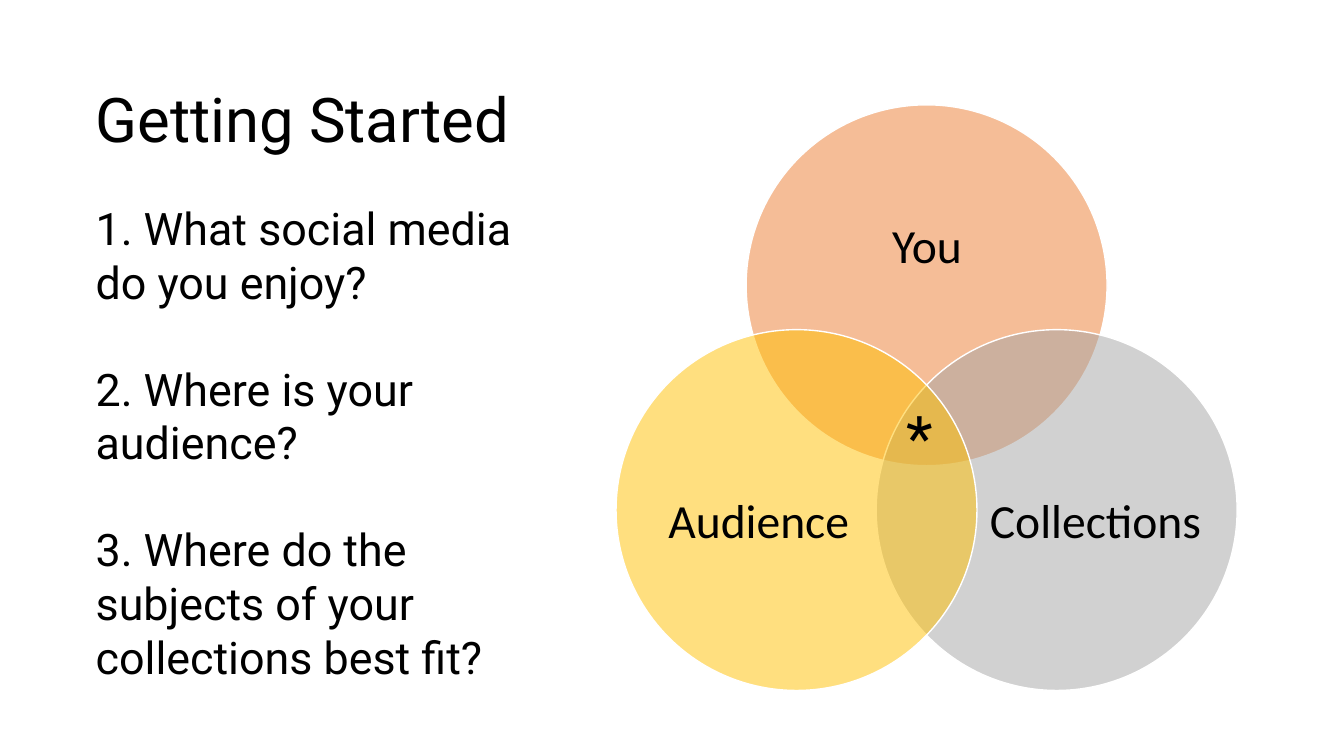
import math
from dataclasses import dataclass

import pptx
import pptx.dml.color
import pptx.enum.shapes
import pptx.enum.text
import pptx.oxml
import pptx.oxml.ns
import pptx.util

PX = 9144
CENTER_X, CENTER_Y = 919, 432
RADIUS, ORBIT = 179, 149


@dataclass(frozen=True)
class Circle:
    label: str
    color: str
    angle: int
    label_box: tuple[int, int, int, int]


CIRCLES = [
    Circle("You", "ED7D31", -90, (788, 166, 263, 161)),
    Circle("Collections", "A5A5A5", 30, (979, 420, 215, 197)),
    Circle("Audience", "FFC000", 150, (645, 420, 215, 197)),
]
QUESTIONS = [
    "1. What social media do you enjoy?",
    "2. Where is your audience?",
    "3. Where do the subjects of your collections best fit?",
]


def px(n: int) -> int:
    return pptx.util.Emu(n * PX)


def rgb(color: str) -> pptx.dml.color.RGBColor:
    return pptx.dml.color.RGBColor.from_string(color)


def add_text(shapes, box: tuple[int, int, int, int], *lines: str, size: int,
             font: str = "Roboto", color: str = "000000",
             align: str = "LEFT", anchor: str = "TOP", line_spacing: float = 1.0,
             gap: int = 0, inset: bool = True) -> None:
    tf = shapes.add_textbox(*map(px, box)).text_frame
    tf.word_wrap = True
    tf.vertical_anchor = pptx.enum.text.MSO_ANCHOR[anchor]
    if not inset:
        tf.margin_left = tf.margin_top = tf.margin_right = tf.margin_bottom = 0
    for i, line in enumerate(lines):
        p = tf.add_paragraph() if i else tf.paragraphs[0]
        p.alignment = pptx.enum.text.PP_ALIGN[align]
        p.line_spacing = line_spacing
        if i:
            p.space_before = pptx.util.Pt(gap)
        r = p.add_run()
        r.text = line
        r.font.name = font
        r.font.size = pptx.util.Pt(size)
        r.font.color.rgb = rgb(color)


def add_circle(shapes, circle: Circle) -> None:
    angle = math.radians(circle.angle)
    left = round(CENTER_X + ORBIT * math.cos(angle)) - RADIUS
    top = round(CENTER_Y + ORBIT * math.sin(angle)) - RADIUS
    s = shapes.add_shape(pptx.enum.shapes.MSO_SHAPE.OVAL,
                         px(left), px(top), px(2 * RADIUS), px(2 * RADIUS))
    s.shadow.inherit = False
    s.fill.solid()
    s.fill.fore_color.rgb = rgb(circle.color)
    fill = s.fill._xPr.find(pptx.oxml.ns.qn("a:solidFill"))
    alpha = pptx.oxml.parse_xml(
        f'<a:alpha {pptx.oxml.ns.nsdecls("a")} val="50000"/>')
    fill[0].append(alpha)
    s.line.color.rgb = rgb("FFFFFF")
    s.line.width = pptx.util.Pt(1)
    add_text(shapes, circle.label_box, circle.label, size=34, font="Calibri",
             align="CENTER", anchor="MIDDLE", line_spacing=0.9, inset=False)


def main() -> None:
    prs = pptx.Presentation()
    prs.slide_width, prs.slide_height = px(1333), px(750)
    slide = prs.slides.add_slide(prs.slide_layouts[6])
    add_text(slide.shapes, (85, 49, 1150, 145), "Getting Started", size=44,
             anchor="MIDDLE", line_spacing=0.9)
    venn = slide.shapes.add_group_shape()
    for circle in CIRCLES:
        add_circle(venn.shapes, circle)
    add_text(slide.shapes, (889, 391, 177, 84), "*", size=44)
    add_text(slide.shapes, (85, 194, 488, 495), *QUESTIONS, size=32, gap=38)
    prs.save("out.pptx")


if __name__ == "__main__":
    main()
